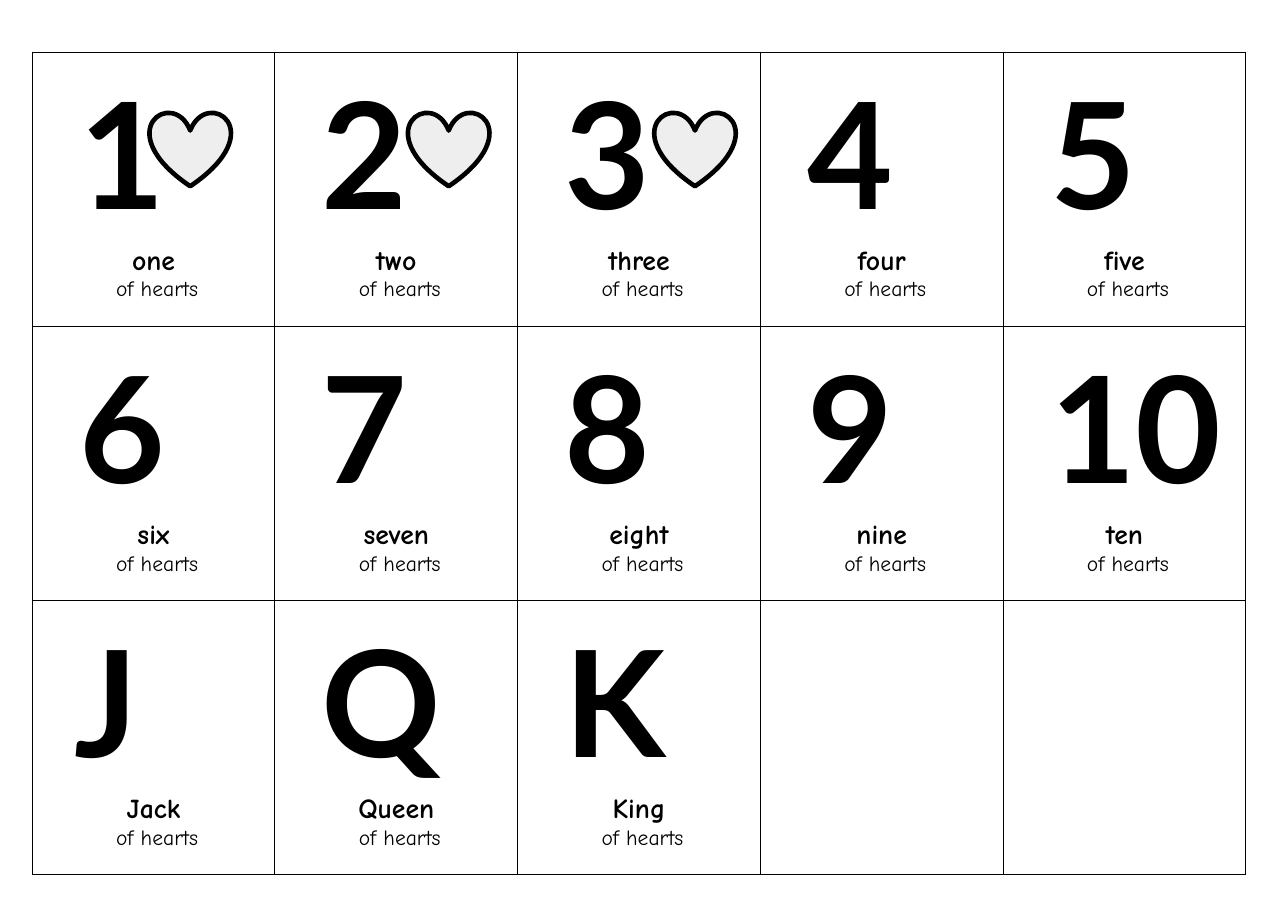
from dataclasses import dataclass

from lxml.etree import SubElement
from pptx import Presentation
from pptx.dml.color import RGBColor
from pptx.enum.shapes import MSO_SHAPE
from pptx.enum.text import PP_ALIGN
from pptx.oxml.ns import qn
from pptx.util import Inches, Pt


@dataclass(frozen=True)
class Theme:
    ink: str = "000000"
    heart: str = "EEEEEE"
    rank_font: str = "Lato"
    label_font: str = "Comic Neue"
    rank_size: int = 96
    name_size: int = 18
    suit_size: int = 14
    border: float = 0.75
    heart_line: float = 3


THEME = Theme()
COLUMNS, ROWS = 5, 3
CARDS = [
    ("1", "one"), ("2", "two"), ("3", "three"), ("4", "four"), ("5", "five"),
    ("6", "six"), ("7", "seven"), ("8", "eight"), ("9", "nine"), ("10", "ten"),
    ("J", "Jack"), ("Q", "Queen"), ("K", "King"),
]


def add_borders(cell):
    properties = cell._tc.get_or_add_tcPr()
    for side in ("a:lnL", "a:lnR", "a:lnT", "a:lnB"):
        line = SubElement(properties, qn(side), w=str(Pt(THEME.border)))
        fill = SubElement(line, qn("a:solidFill"))
        SubElement(fill, qn("a:srgbClr"), val=THEME.ink)


def write_card(cell, rank, name):
    # Rank, its name in words, then the suit
    lines = [
        (f" {rank}", THEME.rank_font, THEME.rank_size, True, PP_ALIGN.LEFT, 1.0),
        (name, THEME.label_font, THEME.name_size, True, PP_ALIGN.CENTER, 1.15),
        (" of hearts", THEME.label_font, THEME.suit_size, False, PP_ALIGN.CENTER, 1.0),
    ]
    frame = cell.text_frame
    frame.text = "\n".join(line[0] for line in lines)
    for paragraph, (_, font, size, bold, align, spacing) in zip(frame.paragraphs, lines):
        paragraph.alignment = align
        paragraph.line_spacing = spacing
        paragraph.font.name = font
        paragraph.font.size = Pt(size)
        paragraph.font.bold = bold
        paragraph.font.color.rgb = RGBColor.from_string(THEME.ink)


def add_card_grid(slide, left, top, width, height):
    table = slide.shapes.add_table(
        ROWS, COLUMNS, Inches(left), Inches(top), Inches(width), Inches(height)
    ).table
    table.first_row = False
    table.horz_banding = False
    for cell in table.iter_cells():
        add_borders(cell)
        cell.fill.background()
        cell.margin_left = cell.margin_right = Inches(0.1)
        cell.margin_top = cell.margin_bottom = Inches(0.1)
    for index, (rank, name) in enumerate(CARDS):
        write_card(table.cell(*divmod(index, COLUMNS)), rank, name)


def add_heart(slide, left, top, width, height):
    heart = slide.shapes.add_shape(
        MSO_SHAPE.HEART, Inches(left), Inches(top), Inches(width), Inches(height)
    )
    heart.shadow.inherit = False
    heart.fill.solid()
    heart.fill.fore_color.rgb = RGBColor.from_string(THEME.heart)
    heart.line.color.rgb = RGBColor.from_string(THEME.ink)
    heart.line.width = Pt(THEME.heart_line)
    SubElement(heart.line._get_or_add_ln(), qn("a:round"))


def add_hearts_slide(presentation, left, top, width, height):
    slide = presentation.slides.add_slide(presentation.slide_layouts[6])
    add_card_grid(slide, left, top, width, height)
    # Hearts beside the first three ranks
    for offset in (1.06, 3.39, 5.61):
        add_heart(slide, left + offset, top + 0.54, 0.73, 0.67)


def main():
    presentation = Presentation()
    presentation.slide_width = Inches(11.61)
    presentation.slide_height = Inches(8.27)
    add_hearts_slide(presentation, 0.29, 0.47, 10.94, 7.42)
    presentation.save("out.pptx")


if __name__ == "__main__":
    main()
